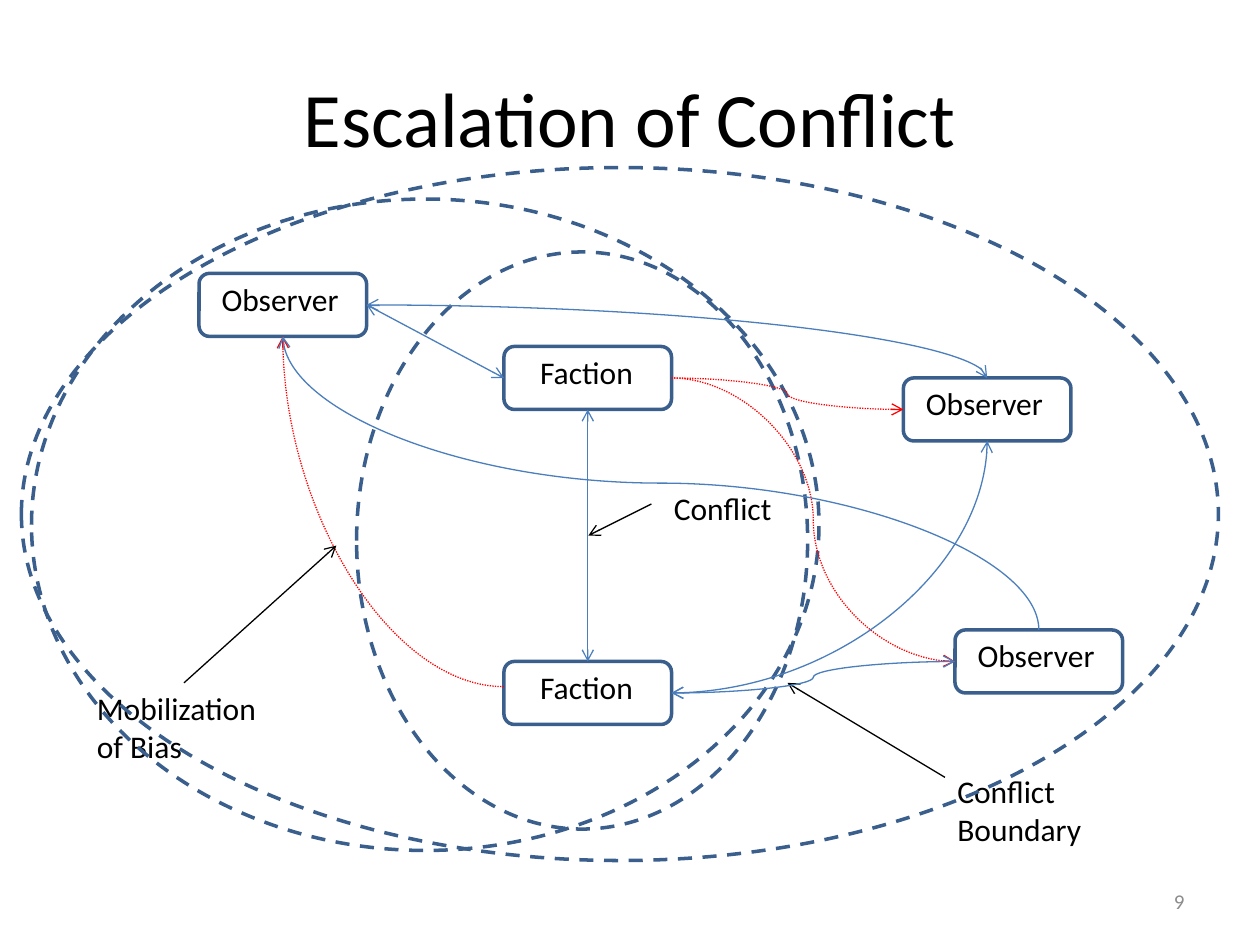
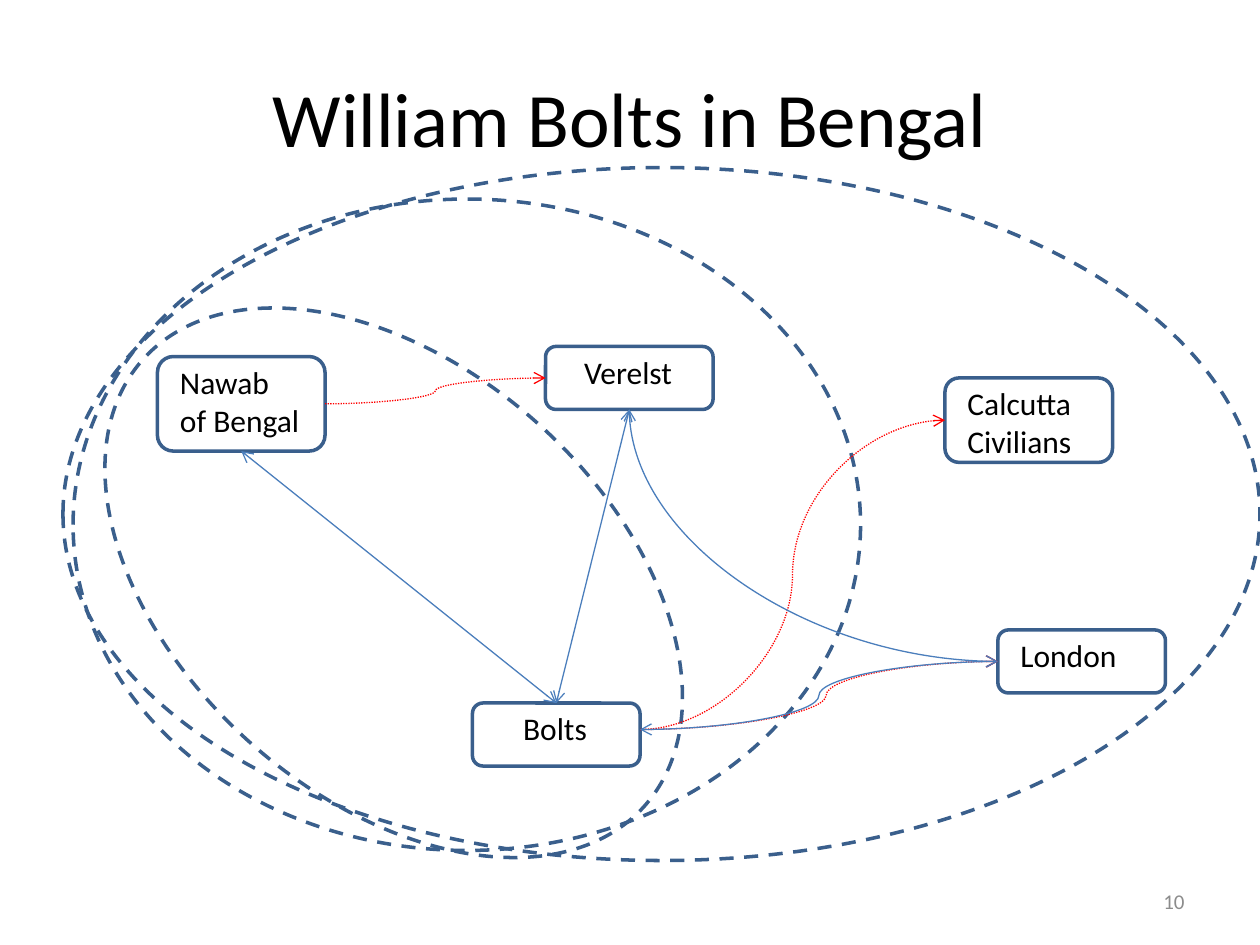
from pptx import Presentation
from pptx.dml.color import RGBColor
from pptx.enum.dml import MSO_LINE
from pptx.enum.shapes import MSO_CONNECTOR, MSO_SHAPE
from pptx.enum.text import MSO_ANCHOR, MSO_AUTO_SIZE, PP_ALIGN
from pptx.oxml.ns import qn
from pptx.util import Inches, Pt
from lxml.etree import SubElement

BLACK = RGBColor(0x00, 0x00, 0x00)
GREY = RGBColor(0x8C, 0x8C, 0x8C)
NAVY = RGBColor(0x3A, 0x5F, 0x8C)
BLUE = RGBColor(0x4B, 0x7E, 0xBC)
RED = RGBColor(0xFF, 0x00, 0x00)

NODE_WIDTH = 1.33
LABEL_INSET = 0.08
LABEL_WIDTH = 1.15
LINE_HEIGHT = 0.31


def point(x, y):
    return Inches(x), Inches(y)


def left(node):
    return node.left, node.top + node.height // 2


def right(node):
    return node.left + node.width, node.top + node.height // 2


def top(node):
    return node.left + node.width // 2, node.top


def bottom(node):
    return node.left + node.width // 2, node.top + node.height


class Diagram:
    font = "Calibri"

    def __init__(self, deck):
        self.deck = deck
        self.slide = None

    def start(self, title, number):
        self.slide = self.deck.slides.add_slide(self.deck.slide_layouts[6])
        self.text(title, 0.5, 0.3, 9, 1.25, 44, BLACK, PP_ALIGN.CENTER, MSO_ANCHOR.MIDDLE)
        self.text(number, 7.17, 6.95, 2.33, 0.4, 12, GREY, PP_ALIGN.RIGHT, MSO_ANCHOR.MIDDLE)

    def text(self, words, x, y, width, height, size, color,
             align=PP_ALIGN.LEFT, anchor=MSO_ANCHOR.TOP):
        box = self.slide.shapes.add_textbox(
            Inches(x), Inches(y), Inches(width), Inches(height))
        frame = box.text_frame
        frame.word_wrap = True
        frame.vertical_anchor = anchor
        paragraph = frame.paragraphs[0]
        paragraph.text = words
        paragraph.alignment = align
        paragraph.font.name = self.font
        paragraph.font.size = Pt(size)
        paragraph.font.color.rgb = color
        return frame

    def label(self, words, x, y, width, lines=1, align=PP_ALIGN.LEFT):
        frame = self.text(words, x, y, width, 0.09 + lines * LINE_HEIGHT, 18, BLACK, align)
        frame.auto_size = MSO_AUTO_SIZE.SHAPE_TO_FIT_TEXT

    def outline(self, kind, x, y, width, height):
        shape = self.slide.shapes.add_shape(
            kind, Inches(x), Inches(y), Inches(width), Inches(height))
        shape.shadow.inherit = False
        shape.fill.background()
        shape.line.color.rgb = NAVY
        shape.line.width = Pt(2)
        return shape

    def boundary(self, x, y, width, height, rotation=0):
        ellipse = self.outline(MSO_SHAPE.OVAL, x, y, width, height)
        ellipse.line.dash_style = MSO_LINE.DASH
        ellipse.rotation = rotation

    def node(self, words, x, y, height=0.5, lines=1, align=PP_ALIGN.LEFT):
        box = self.outline(MSO_SHAPE.ROUNDED_RECTANGLE, x, y, NODE_WIDTH, height)
        self.label(words, x + LABEL_INSET, y, LABEL_WIDTH, lines, align)
        return box

    def arrow(self, start, end, color=BLACK, both=False, kind=MSO_CONNECTOR.STRAIGHT):
        connector = self.slide.shapes.add_connector(kind, *start, *end)
        connector.line.color.rgb = color
        connector.line.width = Pt(0.75)
        if color == RED:
            connector.line.dash_style = MSO_LINE.ROUND_DOT
        properties = connector._element.spPr
        line = properties.find(qn("a:ln"))
        for tag in ("a:headEnd", "a:tailEnd") if both else ("a:tailEnd",):
            SubElement(line, qn(tag)).set("type", "arrow")
        SubElement(properties, qn("a:effectLst"))
        return properties

    def s_curve(self, start, end, color, both=False, bend=0.5):
        properties = self.arrow(start, end, color, both, MSO_CONNECTOR.CURVE)
        if bend != 0.5:
            adjustments = properties.find(qn("a:prstGeom")).get_or_add_avLst()
            guide = SubElement(adjustments, qn("a:gd"))
            guide.set("name", "adj1")
            guide.set("fmla", f"val {round(bend * 100000)}")
        return properties

    def vertical_s_curve(self, start, end, color):
        center_x, center_y = (start[0] + end[0]) // 2, (start[1] + end[1]) // 2
        turned = [(center_x - (y - center_y), center_y + (x - center_x))
                  for x, y in (start, end)]
        properties = self.s_curve(*turned, color)
        properties.find(qn("a:xfrm")).set("rot", str(270 * 60000))

    def quarter_curve(self, start, end, color, both=False):
        properties = self.arrow(start, end, color, both, MSO_CONNECTOR.CURVE)
        properties.find(qn("a:prstGeom")).set("prst", "curvedConnector2")


def escalation(diagram):
    diagram.start("Escalation of Conflict", "9")
    diagram.boundary(2.83, 2, 3.58, 4.58)
    upper_faction = diagram.node("Faction", 4, 2.75, align=PP_ALIGN.CENTER)
    lower_faction = diagram.node("Faction", 4, 5.25, align=PP_ALIGN.CENTER)
    east = diagram.node("Observer", 7.17, 3)
    southeast = diagram.node("Observer", 7.58, 5)
    west = diagram.node("Observer", 1.58, 2.17)

    diagram.arrow(point(7.5, 6.17), point(6.25, 5.42))
    diagram.label("Conflict Boundary", 7.5, 6.08, 1.33, 2)
    diagram.quarter_curve(point(4, 5.45), bottom(west), RED)
    diagram.arrow(bottom(upper_faction), top(lower_faction), BLUE, both=True)
    diagram.arrow(point(1.46, 5.42), point(2.67, 4.33))
    diagram.label("Mobilization of Bias", 0.67, 5.42, 1.58, 2)
    diagram.arrow(point(5.17, 4), point(4.67, 4.25))
    diagram.label("Conflict", 5.25, 3.83, 1)

    diagram.boundary(0.25, 1.58, 6.25, 5.17)
    for observer in (east, southeast):
        diagram.s_curve(right(upper_faction), left(observer), RED)
    diagram.boundary(0.17, 1.33, 9.5, 5.5)
    diagram.arrow(left(upper_faction), right(west), BLUE, both=True)
    diagram.quarter_curve(right(west), top(east), BLUE, both=True)
    diagram.quarter_curve(right(lower_faction), bottom(east), BLUE, both=True)
    diagram.vertical_s_curve(top(southeast), bottom(west), BLUE)
    diagram.s_curve(left(southeast), right(lower_faction), BLUE, both=True)


def bengal(diagram):
    diagram.start("William Bolts in Bengal", "10")
    diagram.boundary(1.42, 1.96, 3.41, 5.33, rotation=311.6)
    verelst = diagram.node("Verelst", 4.33, 2.75, align=PP_ALIGN.CENTER)
    bolts = diagram.node("Bolts", 3.75, 5.58, align=PP_ALIGN.CENTER)
    civilians = diagram.node("Calcutta Civilians", 7.5, 3, 0.67, 2)
    london = diagram.node("London", 7.92, 5)
    nawab = diagram.node("Nawab of Bengal", 1.25, 2.83, 0.75, 2)
    bolts_right = point(5.08, 5.79)

    diagram.s_curve(right(nawab), left(verelst), RED)
    diagram.arrow(bottom(nawab), top(bolts), BLUE, both=True)
    diagram.boundary(0.58, 1.58, 6.25, 5.17)
    diagram.s_curve(bolts_right, left(civilians), RED)
    diagram.boundary(0.5, 1.33, 9.5, 5.5)
    diagram.arrow(bottom(verelst), top(bolts), BLUE, both=True)
    diagram.quarter_curve(left(london), bottom(verelst), BLUE, both=True)
    diagram.s_curve(bolts_right, left(london), RED, bend=0.52)
    diagram.s_curve(left(london), bolts_right, BLUE, both=True)


def main():
    deck = Presentation()
    deck.slide_width = Inches(10)
    deck.slide_height = Inches(7.5)
    diagram = Diagram(deck)
    escalation(diagram)
    bengal(diagram)
    deck.save("out.pptx")


if __name__ == "__main__":
    main()
